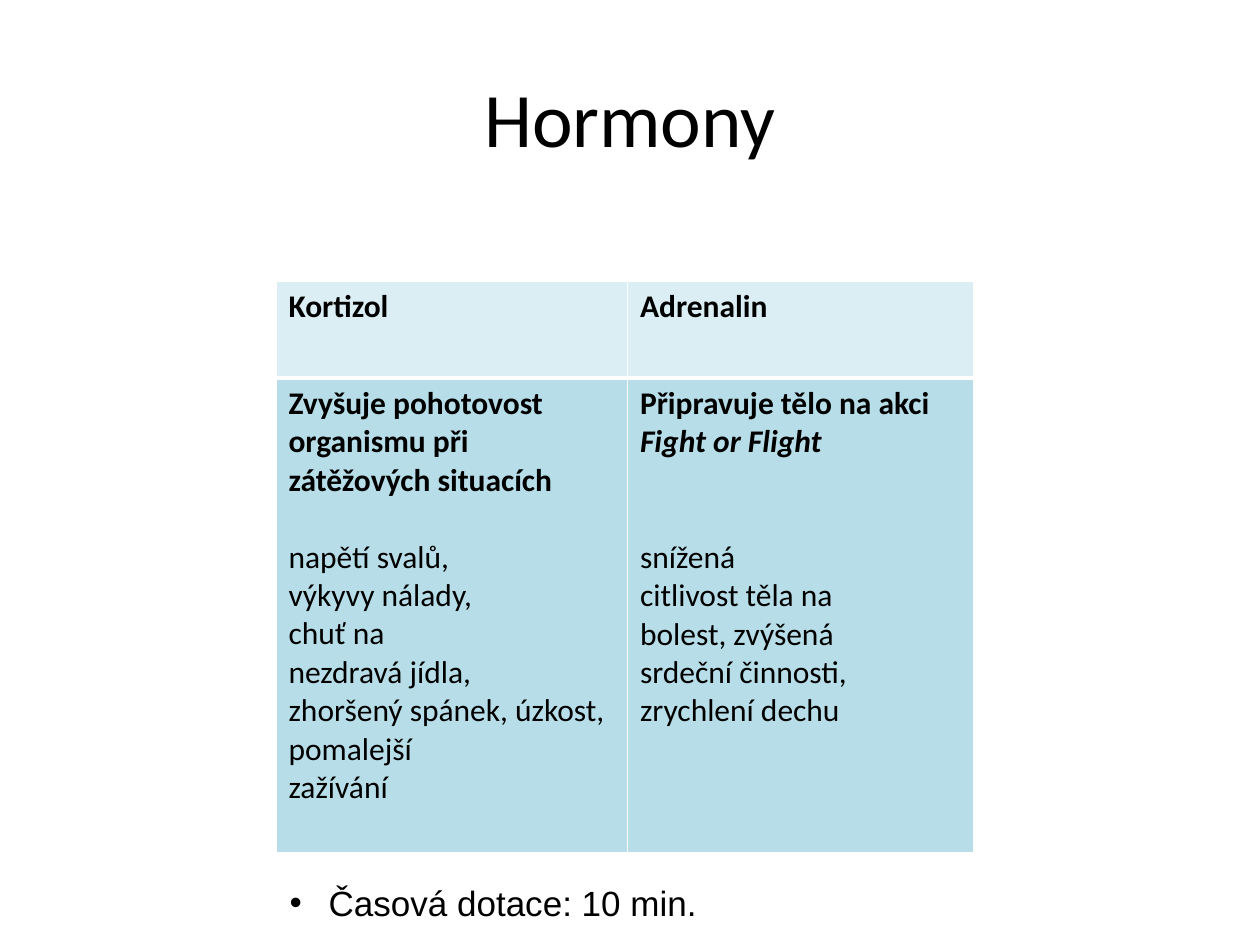
from dataclasses import dataclass

from lxml.etree import SubElement
from pptx import Presentation
from pptx.dml.color import RGBColor
from pptx.enum.text import MSO_ANCHOR as Anchor, MSO_AUTO_SIZE as AutoSize, PP_ALIGN as Align
from pptx.oxml.ns import qn
from pptx.util import Inches, Pt

BLACK = "000000"
WHITE = "FFFFFF"
HEADER_FILL = "DBEEF4"
BODY_FILL = "B7DEE8"
CELL_LINE = 22


@dataclass(frozen=True)
class Span:
    text: str
    bold: bool = False
    italic: bool = False


@dataclass(frozen=True)
class Line:
    spans: tuple[Span, ...]
    space_before: float = 0


@dataclass(frozen=True)
class CellContent:
    lines: tuple[Line, ...]
    fill: str


def color(value: str) -> RGBColor:
    return RGBColor.from_string(value)


def bold_line(text: str) -> Line:
    return Line((Span(text, bold=True),))


def effects(gap_lines: int, *texts: str) -> tuple[Line, ...]:
    return tuple(
        Line((Span(text),), gap_lines * CELL_LINE if index == 0 else 0)
        for index, text in enumerate(texts)
    )


ROWS = (
    (
        CellContent((bold_line("Kortizol"),), HEADER_FILL),
        CellContent((bold_line("Adrenalin"),), HEADER_FILL),
    ),
    (
        CellContent(
            (
                bold_line("Zvyšuje pohotovost organismu při zátěžových situacích"),
                *effects(
                    1,
                    "napětí svalů,",
                    "výkyvy nálady,",
                    "chuť na",
                    "nezdravá jídla,",
                    "zhoršený spánek, úzkost,",
                    "pomalejší",
                    "zažívání",
                ),
            ),
            BODY_FILL,
        ),
        CellContent(
            (
                Line((
                    Span("Připravuje tělo na akci ", bold=True),
                    Span("Fight or Flight", bold=True, italic=True),
                )),
                *effects(
                    2,
                    "snížená",
                    "citlivost těla na",
                    "bolest, zvýšená",
                    "srdeční činnosti,",
                    "zrychlení dechu",
                ),
            ),
            BODY_FILL,
        ),
    ),
)


def apply(target, values: dict) -> None:
    for name, value in values.items():
        setattr(target, name, value)


def add_span(para, span: Span, size: float, font: str) -> None:
    run = para.add_run()
    run.text = span.text
    apply(run.font, {
        "name": font, "size": Pt(size), "bold": span.bold, "italic": span.italic,
    })
    run.font.color.rgb = color(BLACK)


def add_text(page, left: float, top: float, width: float, height: float,
             text: str, size: float, font: str, frame_format: dict, para_format: dict):
    box = page.shapes.add_textbox(Inches(left), Inches(top), Inches(width), Inches(height))
    apply(box.text_frame, {"word_wrap": True, **frame_format})
    para = box.text_frame.paragraphs[0]
    apply(para, para_format)
    add_span(para, Span(text), size, font)
    return para


def add_bullet(para, indent: float) -> None:
    properties = para._p.get_or_add_pPr()
    properties.set("marL", str(Inches(indent)))
    properties.set("indent", str(-Inches(indent)))
    SubElement(properties, qn("a:buFont"), typeface="Arial")
    SubElement(properties, qn("a:buChar"), char="•")


def set_borders(cell, widths: dict[str, float]) -> None:
    properties = cell._tc.get_or_add_tcPr()
    for index, (side, width) in enumerate(widths.items()):
        border = properties.makeelement(qn(f"a:{side}"), {"w": str(Pt(width))})
        fill = SubElement(border, qn("a:solidFill"))
        SubElement(fill, qn("a:srgbClr"), val=WHITE)
        properties.insert(index, border)


def fill_cell(cell, content: CellContent, borders: dict[str, float]) -> None:
    cell.fill.solid()
    cell.fill.fore_color.rgb = color(content.fill)
    set_borders(cell, borders)
    for index, line in enumerate(content.lines):
        frame = cell.text_frame
        para = frame.add_paragraph() if index else frame.paragraphs[0]
        para.space_before = Pt(line.space_before)
        for span in line.spans:
            add_span(para, span, 18, "Calibri")


def add_hormone_table(page) -> None:
    widths, heights = (2.79, 2.75), (0.77, 3.77)
    table = page.shapes.add_table(
        len(heights), len(widths), Inches(2.19), Inches(2.23),
        Inches(sum(widths)), Inches(sum(heights)),
    ).table
    apply(table, {"first_row": False, "horz_banding": False})
    for column, width in zip(table.columns, widths):
        column.width = Inches(width)
    for row, height in zip(table.rows, heights):
        row.height = Inches(height)
    for row_index, contents in enumerate(ROWS):
        header = row_index == 0
        borders = {"lnL": 1, "lnR": 1, "lnT": 1 if header else 3, "lnB": 3 if header else 1}
        for column_index, content in enumerate(contents):
            fill_cell(table.cell(row_index, column_index), content, borders)


def main() -> None:
    deck = Presentation()
    apply(deck, {"slide_width": Inches(10), "slide_height": Inches(7.5)})
    page = deck.slides.add_slide(deck.slide_layouts[6])
    add_text(page, 0.5, 0.3, 9, 1.25, "Hormony", 44, "Calibri",
             {"vertical_anchor": Anchor.MIDDLE}, {"alignment": Align.CENTER})
    add_hormone_table(page)
    note = add_text(page, 2.2, 6.78, 4.7, 0.54, "Časová dotace: 10 min.", 20, "Arial",
                    {"auto_size": AutoSize.SHAPE_TO_FIT_TEXT},
                    {"line_spacing": 1.5, "space_before": Pt(4)})
    add_bullet(note, 0.31)
    deck.save("out.pptx")


if __name__ == "__main__":
    main()
